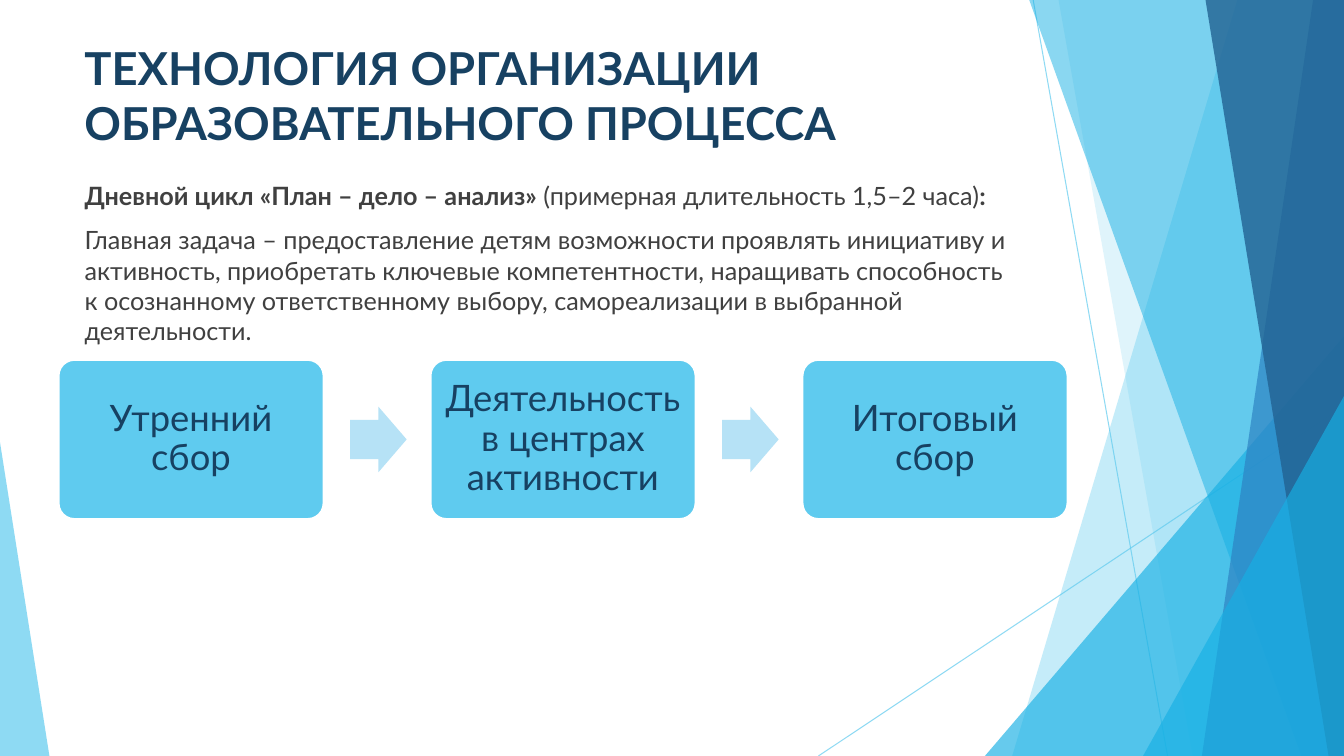
from lxml import etree
from pptx import Presentation
from pptx.dml.color import RGBColor
from pptx.enum.shapes import MSO_CONNECTOR, MSO_SHAPE
from pptx.enum.text import MSO_ANCHOR, PP_ALIGN
from pptx.oxml.ns import qn
from pptx.util import Pt

STRAIGHT = MSO_CONNECTOR.STRAIGHT
TRIANGLE = MSO_SHAPE.ISOSCELES_TRIANGLE
ROUNDED = MSO_SHAPE.ROUNDED_RECTANGLE
RIGHT_ARROW = MSO_SHAPE.RIGHT_ARROW
CENTER = PP_ALIGN.CENTER
MIDDLE = MSO_ANCHOR.MIDDLE

WHITE = RGBColor(0xFF, 0xFF, 0xFF)
SKY = RGBColor(0x5F, 0xCB, 0xEF)
AZURE = RGBColor(0x17, 0xB0, 0xE4)
BLUE = RGBColor(0x2E, 0x83, 0xC3)
DEEP_BLUE = RGBColor(0x22, 0x62, 0x92)
PALE_SKY = RGBColor(0xB6, 0xE2, 0xF6)
NAVY = RGBColor(0x17, 0x41, 0x62)
GRAY = RGBColor(0x40, 0x40, 0x40)

FONT = "Lato"
WIDTH, HEIGHT = 960, 540
BAND_TOP = -0.6

# Stages of the daily cycle
STAGES = ["Утренний сбор", "Деятельность в центрах активности", "Итоговый сбор"]
STAGE_LEFT, STAGE_TOP, STAGE_STEP = 41.8, 257, 265.7
STAGE_WIDTH, STAGE_HEIGHT = 189.4, 113.8
ARROW_WIDTH, ARROW_HEIGHT = 40.3, 46.8


def set_alpha(fill_parent, percent):
    color = fill_parent.find(".//" + qn("a:srgbClr"))
    etree.SubElement(color, qn("a:alpha"), val=str(percent * 1000))


def paint(shape, color, opacity=100):
    shape.shadow.inherit = False
    shape.fill.solid()
    shape.fill.fore_color.rgb = color
    shape.line.fill.background()
    if opacity < 100:
        set_alpha(shape._element.spPr.find(qn("a:solidFill")).getparent(), opacity)


def add_preset(slide, preset, left, top, width, height, adjustments):
    shape = slide.shapes.add_shape(preset, Pt(left), Pt(top), Pt(width), Pt(height))
    for index, value in enumerate(adjustments):
        shape.adjustments[index] = value
    return shape


def add_thin_line(slide, start, end):
    line = slide.shapes.add_connector(STRAIGHT, *map(Pt, start + end))
    line.line.color.rgb = SKY
    line.line.width = Pt(0.75)
    set_alpha(line.line._ln, 70)
    etree.SubElement(line._element.spPr, qn("a:effectLst"))


def add_band(slide, top_x, bottom_x, color, opacity):
    """Band from a slanted left edge to the right side of the slide."""
    builder = slide.shapes.build_freeform(Pt(top_x), Pt(BAND_TOP))
    corners = [(WIDTH, BAND_TOP), (WIDTH, HEIGHT), (bottom_x, HEIGHT)]
    builder.add_line_segments([(Pt(x), Pt(y)) for x, y in corners], close=True)
    paint(builder.convert_to_shape(), color, opacity)


def add_corner(slide, left, top, width, apex, color, opacity):
    """Right triangle standing on the bottom edge of the slide."""
    corner = add_preset(slide, TRIANGLE, left, top, width, HEIGHT - top, [apex])
    paint(corner, color, opacity)


def add_run(paragraph, text, size, color, bold=False):
    run = paragraph.add_run()
    run.text = text
    run.font.name = FONT
    run.font.size = Pt(size)
    run.font.bold = bold
    run.font.color.rgb = color


def add_text(slide, left, top, width, height, paragraphs, size, color):
    frame = slide.shapes.add_textbox(Pt(left), Pt(top), Pt(width), Pt(height)).text_frame
    frame.word_wrap = True
    for index, runs in enumerate(paragraphs):
        paragraph = frame.add_paragraph() if index else frame.paragraphs[0]
        paragraph.space_before = Pt(10 if index else 0)
        for text, bold in runs:
            add_run(paragraph, text, size, color, bold)


def add_stage(slide, left, text):
    stage = add_preset(slide, ROUNDED, left, STAGE_TOP, STAGE_WIDTH, STAGE_HEIGHT, [0.1])
    paint(stage, SKY)
    stage.line.color.rgb = WHITE
    stage.line.width = Pt(1.5)
    frame = stage.text_frame
    frame.word_wrap = True
    frame.vertical_anchor = MIDDLE
    frame.margin_left = frame.margin_right = Pt(4)
    paragraph = frame.paragraphs[0]
    paragraph.alignment = CENTER
    paragraph.line_spacing = 0.9
    add_run(paragraph, text, 26, NAVY)


def add_stage_arrow(slide, stage_left):
    gap = STAGE_STEP - STAGE_WIDTH
    left = stage_left + STAGE_WIDTH + gap / 2 - ARROW_WIDTH / 2 + 1
    top = STAGE_TOP + (STAGE_HEIGHT - ARROW_HEIGHT) / 2
    arrow = add_preset(slide, RIGHT_ARROW, left, top, ARROW_WIDTH, ARROW_HEIGHT, [0.6, 0.5])
    paint(arrow, PALE_SKY)


def add_backdrop(slide):
    add_thin_line(slide, (738, 0), (834, HEIGHT))
    add_thin_line(slide, (WIDTH, 290), (584.6, HEIGHT))
    add_band(slide, 884, 723, SKY, 36)
    add_band(slide, 756, 852, SKY, 20)
    add_corner(slide, 703.5, 240, 256.5, 1, AZURE, 66)
    add_band(slide, 735, 929.5, AZURE, 50)
    add_band(slide, 938, 858.5, BLUE, 70)
    add_band(slide, 861, 949, DEEP_BLUE, 80)
    add_corner(slide, 816.5, 283, 143.5, 1, AZURE, 66)
    add_corner(slide, 0, 316, 35.3, 0, SKY, 70)


def main():
    presentation = Presentation()
    presentation.slide_width, presentation.slide_height = Pt(WIDTH), Pt(HEIGHT)
    slide = presentation.slides.add_slide(presentation.slide_layouts[6])

    # Slanted bands on both sides
    add_backdrop(slide)

    # Title
    title = [[("ТЕХНОЛОГИЯ ОРГАНИЗАЦИИ ОБРАЗОВАТЕЛЬНОГО ПРОЦЕССА", True)]]
    add_text(slide, 53.3, 25.2, 692, 88, title, 32.4, NAVY)

    # Description of the cycle
    description = [
        [
            ("Дневной цикл «План – дело – анализ» ", True),
            ("(примерная длительность 1,5–2 часа)", False),
            (":", True),
        ],
        [
            (
                "Главная задача – предоставление детям возможности проявлять "
                "инициативу и активность, приобретать ключевые компетентности, "
                "наращивать способность к осознанному ответственному выбору, "
                "самореализации в выбранной деятельности.",
                False,
            )
        ],
    ]
    add_text(slide, 53.3, 125.3, 677, 125, description, 18, GRAY)

    # Stages joined by arrows
    for index, text in enumerate(STAGES):
        left = STAGE_LEFT + index * STAGE_STEP
        add_stage(slide, left, text)
        if index < len(STAGES) - 1:
            add_stage_arrow(slide, left)

    presentation.save("out.pptx")


if __name__ == "__main__":
    main()
